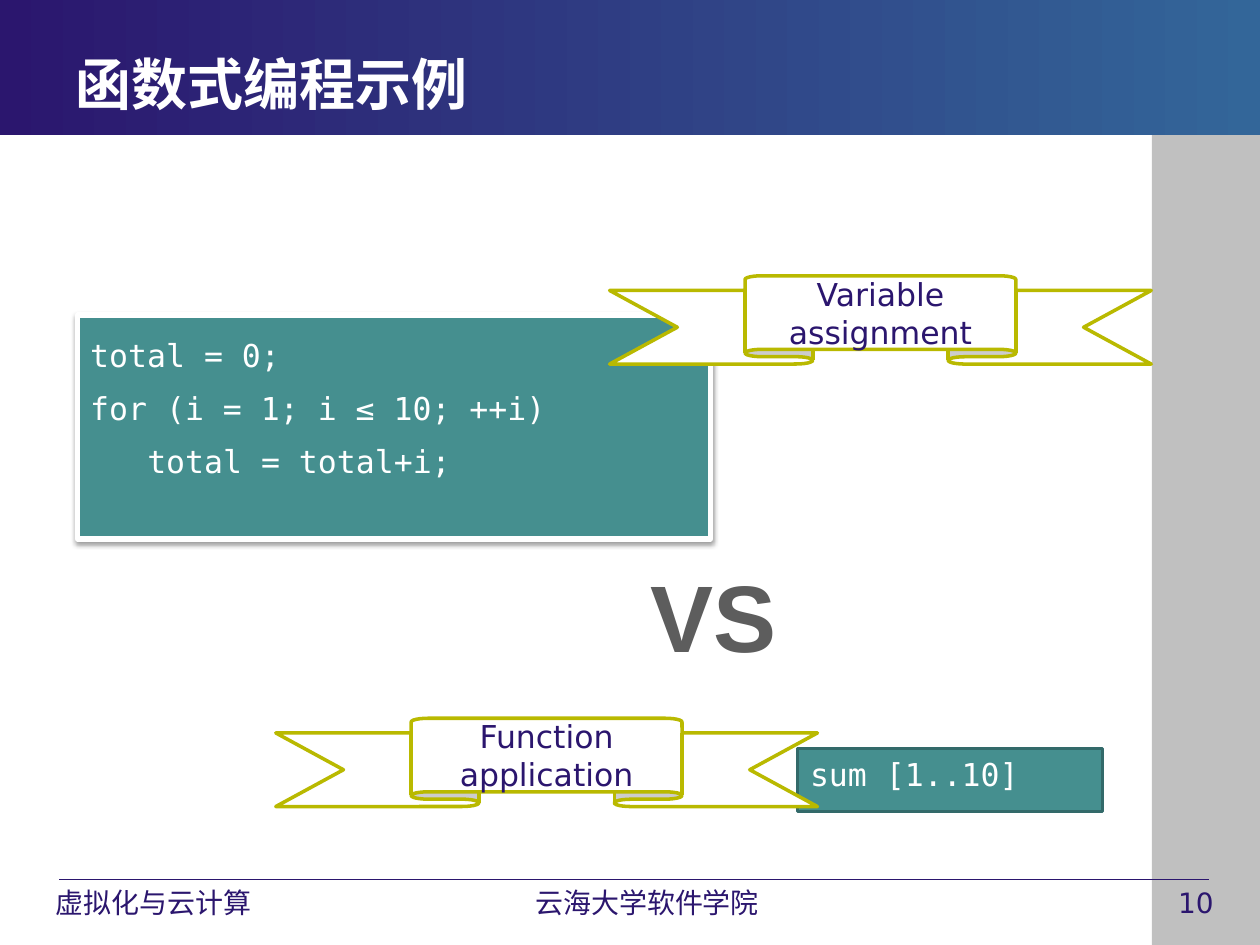
"""Build the slide that contrasts imperative and functional summing."""
from dataclasses import dataclass, field
from typing import Optional

from lxml import etree
from pptx import Presentation
from pptx.dml.color import RGBColor
from pptx.enum import shapes, text
from pptx.oxml import ns
from pptx.util import Cm, Pt

COLORS = {
    "navy": "2B166E", "blue": "336699", "silver": "C0C0C0", "white": "FFFFFF",
    "teal": "458F8F", "dark_teal": "336A6A", "olive": "B9B900",
    "grey": "5D5D5D", "black": "000000",
}
SANS, MONO = "DejaVu Sans", "DejaVu Sans Mono"
RECTANGLE = shapes.MSO_SHAPE.RECTANGLE
RIBBON = shapes.MSO_SHAPE.UP_RIBBON
LEFT, CENTER = text.PP_ALIGN.LEFT, text.PP_ALIGN.CENTER
TOP, MIDDLE = text.MSO_ANCHOR.TOP, text.MSO_ANCHOR.MIDDLE
CODE_INDENT = Cm(1.15)


@dataclass
class Wording:
    """Paragraphs with their indent levels and shared format."""
    lines: list[tuple[str, int]]
    color: str
    font: dict
    align: int = LEFT
    anchor: int = TOP
    spacing: float = 1.0


@dataclass
class Block:
    """A shape or, without a kind, a text box; lengths in centimetres."""
    left: float
    top: float
    width: float
    height: float
    wording: Optional[Wording] = None
    kind: Optional[int] = None
    fills: list[str] = field(default_factory=list)
    border: Optional[tuple[str, float]] = None
    shadow: bool = False


def rgb(name: str) -> RGBColor:
    """Look up a named colour."""
    return RGBColor.from_string(COLORS[name])


def set_all(target, values: dict) -> None:
    """Set each named attribute on the target."""
    for name, value in values.items():
        setattr(target, name, value)


def write(box, wording: Wording) -> None:
    """Write formatted paragraphs into a shape."""
    frame = box.text_frame
    set_all(frame, {"word_wrap": True, "vertical_anchor": wording.anchor})
    for index, (line, level) in enumerate(wording.lines):
        para = frame.add_paragraph() if index else frame.paragraphs[0]
        set_all(para, {"alignment": wording.align, "line_spacing": wording.spacing})
        if level:
            para._p.get_or_add_pPr().set("marL", str(level * CODE_INDENT))
        span = para.add_run()
        span.text = line
        set_all(span.font, wording.font)
        span.font.color.rgb = rgb(wording.color)


def paint(box, fills: list[str]) -> None:
    """Fill a shape with one colour or a left-to-right gradient."""
    if len(fills) == 1:
        box.fill.solid()
        box.fill.fore_color.rgb = rgb(fills[0])
    else:
        box.fill.gradient()
        box.fill.gradient_angle = 0
        for stop, name in zip(box.fill.gradient_stops, fills):
            stop.color.rgb = rgb(name)


def add_shadow(box) -> None:
    """Give a shape a soft shadow below it."""
    effects = box._element.spPr.find(ns.qn("a:effectLst"))
    outer = etree.SubElement(
        effects, ns.qn("a:outerShdw"), blurRad=str(Pt(3.1)), dist=str(Pt(1.6)),
        dir="5400000", algn="ctr", rotWithShape="0")
    shade = etree.SubElement(outer, ns.qn("a:srgbClr"), val=COLORS["black"])
    etree.SubElement(shade, ns.qn("a:alpha"), val="38000")


def draw(page, block: Block) -> None:
    """Draw a block on the page."""
    place = [Cm(n) for n in (block.left, block.top, block.width, block.height)]
    if block.kind is None:
        box = page.shapes.add_textbox(*place)
    else:
        box = page.shapes.add_shape(block.kind, *place)
        box.shadow.inherit = False
        paint(box, block.fills)
        if block.border:
            name, weight = block.border
            box.line.color.rgb = rgb(name)
            box.line.width = Pt(weight)
        else:
            box.line.fill.background()
    if block.shadow:
        add_shadow(box)
    if block.wording:
        write(box, block.wording)


def draw_rule(page, left: float, right: float, top: float) -> None:
    """Draw the thin line above the footer."""
    rule = page.shapes.add_connector(
        shapes.MSO_CONNECTOR.STRAIGHT, Cm(left), Cm(top), Cm(right), Cm(top))
    rule.line.color.rgb = rgb("navy")
    rule.line.width = Pt(0.75)
    etree.SubElement(rule._element.spPr, ns.qn("a:effectLst"))


def footer(left: float, width: float, words: str, align: int) -> Block:
    """Describe one footer entry."""
    font = {"name": SANS, "size": Pt(16)}
    return Block(left, 17.73, width, 0.89, Wording([(words, 0)], "navy", font, align))


def ribbon(left: float, top: float, words: str) -> Block:
    """Describe a ribbon that labels a code sample."""
    font = {"name": SANS, "size": Pt(18)}
    wording = Wording([(words, 0)], "navy", font, CENTER, MIDDLE)
    return Block(left, top, 10.92, 1.78, wording, RIBBON, ["white"], ("olive", 2))


def code(lines: list[tuple[str, int]], spacing: float = 1.0) -> Wording:
    """Describe the wording of a code sample."""
    font = {"name": MONO, "size": Pt(18)}
    return Wording(lines, "white", font, spacing=spacing)


def main() -> None:
    """Build and save the deck."""
    deck = Presentation()
    set_all(deck, {"slide_width": Cm(25.4), "slide_height": Cm(19.05)})
    page = deck.slides.add_slide(deck.slide_layouts[6])
    title = Wording([("函数式编程示例", 0)], "white",
                    {"name": SANS, "size": Pt(32), "bold": True}, anchor=MIDDLE)
    versus = Wording([("VS", 0)], "grey",
                     {"name": "Arial", "size": Pt(54), "bold": True}, CENTER)
    loop = code([("total = 0;", 0), ("for (i = 1; i ≤ 10; ++i)", 0),
                 ("total = total+i;", 1)], 1.4)
    draw(page, Block(23.22, 2.72, 2.18, 16.33, kind=RECTANGLE, fills=["silver"]))
    draw_rule(page, 1.19, 24.38, 17.73)
    for block in (
        Block(0, 0, 25.4, 2.72, kind=RECTANGLE, fills=["navy", "blue"]),
        footer(23.5, 1.8, "10", LEFT),
        footer(0.63, 4.93, "虚拟化与云计算", CENTER),
        footer(10.19, 5.72, "云海大学软件学院", CENTER),
        Block(1.27, 0.89, 17.15, 1.57, title),
        Block(1.57, 6.35, 12.75, 4.52, loop, RECTANGLE, ["teal"], ("white", 3), True),
        Block(12.7, 11.13, 3.38, 2.57, versus),
        Block(16.08, 15.09, 6.15, 1.27, code([("sum [1..10]", 0)]), RECTANGLE,
              ["teal"], ("dark_teal", 2)),
        ribbon(12.29, 5.56, "Variable assignment"),
        ribbon(5.56, 14.48, "Function application"),
    ):
        draw(page, block)
    deck.save("out.pptx")


if __name__ == "__main__":
    main()
